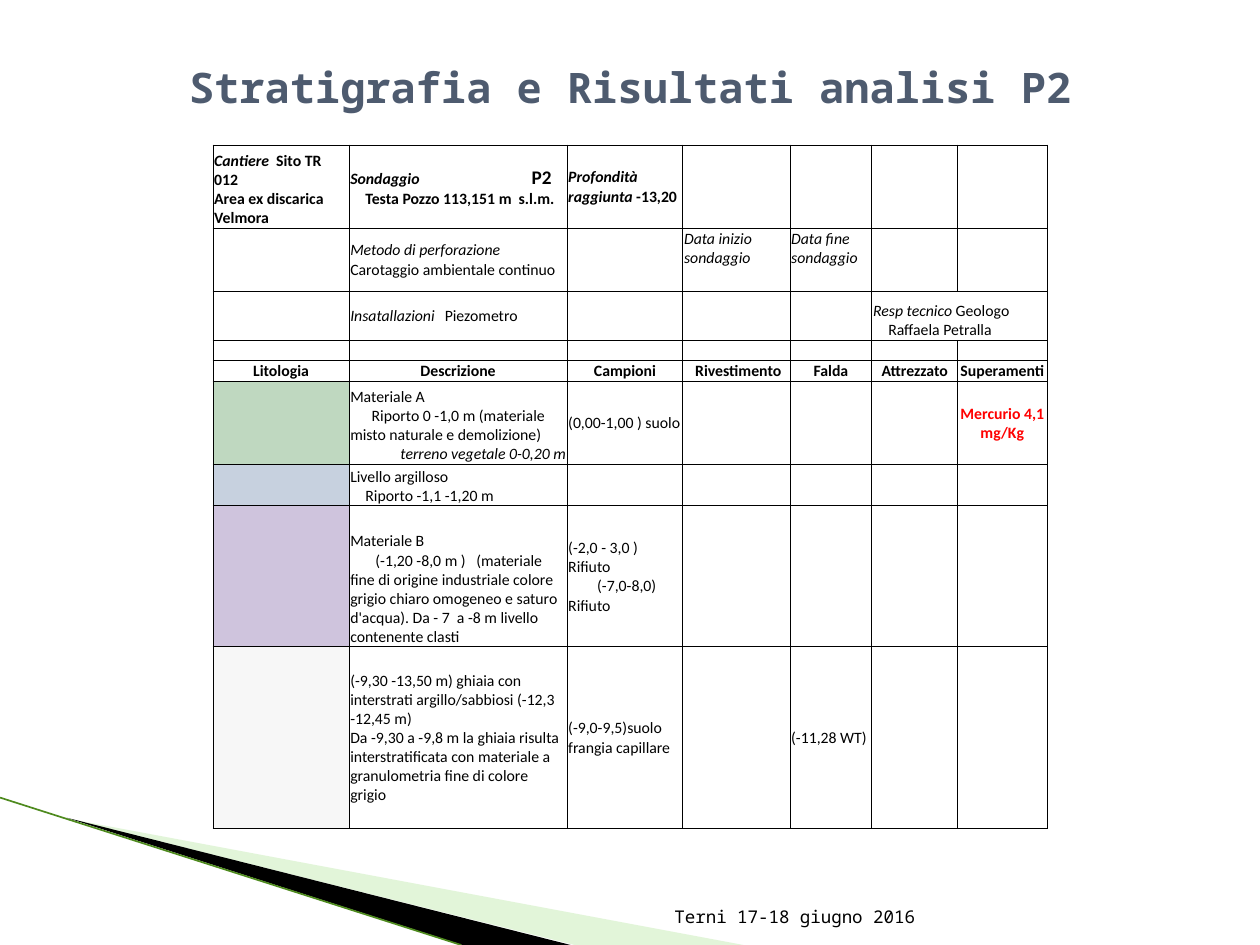
from dataclasses import dataclass
from typing import Optional

from lxml import etree
from pptx import Presentation
from pptx.dml.color import RGBColor
from pptx.enum import shapes, text
from pptx.oxml.ns import qn
from pptx.util import Inches, Pt


@dataclass(frozen=True)
class Theme:
    ink: str = "000000"
    title: str = "4E5B6F"
    alert: str = "FF0000"
    pale_green: str = "B8E7A1"
    edge_green: str = "4E8A1E"
    mono: str = "Noto Sans Mono"
    sans: str = "Calibri"
    title_size: float = 24
    footer_size: float = 10
    cell_size: float = 9
    well_size: float = 11
    border: float = 0.5


@dataclass(frozen=True)
class Run:
    text: str
    bold: bool = False
    italic: bool = False
    size: float = Theme.cell_size
    color: str = Theme.ink
    font: str = Theme.sans


@dataclass(frozen=True)
class Para:
    runs: tuple[Run, ...]
    align: text.PP_ALIGN = text.PP_ALIGN.LEFT
    indent: float = 0
    tab: Optional[float] = None


@dataclass(frozen=True)
class Cell:
    row: int
    col: int
    paras: tuple[Para, ...]
    anchor: text.MSO_ANCHOR = text.MSO_ANCHOR.MIDDLE
    columns: int = 1


THEME = Theme()
CENTER, RIGHT = text.PP_ALIGN.CENTER, text.PP_ALIGN.RIGHT
TOP, BOTTOM = text.MSO_ANCHOR.TOP, text.MSO_ANCHOR.BOTTOM
COLUMNS = (1.08, 1.73, 0.92, 0.85, 0.65, 0.68, 0.71)
ROWS = (0.66, 0.5, 0.39, 0.16, 0.16, 0.66, 0.33, 1.12, 1.44)
LITHOLOGY = {5: "BFD8C0", 6: "C7D1DF", 7: "CFC4DD", 8: "F7F7F7"}
HEADERS = ("Litologia", "Descrizione", "Campioni", " Rivestimento",
           "Falda", "Attrezzato", "Superamenti")


def plain(words: str, indent: float = 0, tab: Optional[float] = None) -> Para:
    return Para((Run(words),), indent=indent, tab=tab)


def italic(words: str) -> Para:
    return Para((Run(words, italic=True),))


def bold(words: str, color: str = THEME.ink) -> Para:
    return Para((Run(words, bold=True, color=color),), CENTER)


CELLS = [
    Cell(0, 0, (Para((Run("Cantiere ", True, True), Run(" Sito TR 012", True))),
                Para((Run("Area ex discarica Velmora", True),))), BOTTOM),
    Cell(0, 1, (Para((Run("Sondaggio\t", True, True),
                      Run("P2", True, size=THEME.well_size)), tab=1.44),
                Para((Run("Testa Pozzo 113,151 m  s.l.m.", True),), indent=0.12))),
    Cell(0, 2, (Para((Run("Profondità raggiunta ", True, True),
                      Run("-13,20", True))),)),
    Cell(1, 1, (italic("Metodo di perforazione"),
                plain("Carotaggio ambientale continuo"))),
    Cell(1, 3, (italic("Data inizio sondaggio"),), TOP),
    Cell(1, 4, (italic("Data fine sondaggio"),), TOP),
    Cell(2, 1, (Para((Run("Insatallazioni", italic=True),
                      Run("\tPiezometro")), tab=0.75),)),
    Cell(2, 5, (Para((Run("Resp tecnico ", italic=True), Run("Geologo"))),
                plain("Raffaela Petralla", 0.12)), BOTTOM, 2),
    *(Cell(4, col, (bold(name),)) for col, name in enumerate(HEADERS)),
    Cell(5, 1, (plain("Materiale A"),
                plain("Riporto 0 -1,0 m (materiale misto naturale e demolizione)", 0.17),
                Para((Run("terreno vegetale 0-0,20 m", italic=True),), RIGHT)), BOTTOM),
    Cell(5, 2, (plain("(0,00-1,00 ) suolo"),)),
    Cell(5, 6, (bold("Mercurio 4,1 mg/Kg", THEME.alert),)),
    Cell(6, 1, (plain("Livello argilloso"), plain("Riporto -1,1 -1,20 m", 0.12)), BOTTOM),
    Cell(7, 1, (plain("Materiale B"),
                plain("(-1,20 -8,0 m )\t(materiale fine di origine industriale colore "
                      "grigio chiaro omogeneo e saturo d'acqua). Da - 7  a -8 m livello "
                      "contenente clasti", 0.2, 1.09)), BOTTOM),
    Cell(7, 2, (plain("(-2,0 - 3,0 )"), plain("Rifiuto"),
                plain("(-7,0-8,0)", 0.23), plain("Rifiuto"))),
    Cell(8, 1, (plain("(-9,30 -13,50 m) ghiaia con interstrati argillo/sabbiosi "
                      "(-12,3 -12,45 m)"),
                plain("Da -9,30 a -9,8 m la ghiaia risulta interstratificata con "
                      "materiale a granulometria fine di colore grigio"))),
    Cell(8, 2, (plain("(-9,0-9,5)suolo frangia capillare"),)),
    Cell(8, 4, (plain("(-11,28 WT)"),)),
]


def write(tf, paras: tuple[Para, ...]) -> None:
    for i, para in enumerate(paras):
        p = tf.paragraphs[0] if i == 0 else tf.add_paragraph()
        p.alignment = para.align
        pPr = p._p.get_or_add_pPr()
        if para.indent:
            pPr.set("marL", "0")
            pPr.set("indent", str(Inches(para.indent)))
        if para.tab:
            tabs = etree.SubElement(pPr, qn("a:tabLst"))
            etree.SubElement(tabs, qn("a:tab"), pos=str(Inches(para.tab)), algn="l")
        for run in para.runs:
            r = p.add_run()
            r.text = run.text
            r.font.name, r.font.size = run.font, Pt(run.size)
            r.font.bold, r.font.italic = run.bold, run.italic
            r.font.color.rgb = RGBColor.from_string(run.color)


def format_cell(cell, fill: Optional[str]) -> None:
    cell.margin_left = cell.margin_right = cell.margin_top = Inches(0.01)
    cell.margin_bottom = 0
    tcPr = cell._tc.get_or_add_tcPr()
    for side in ("lnL", "lnR", "lnT", "lnB"):
        ln = etree.SubElement(tcPr, qn(f"a:{side}"), w=str(Pt(THEME.border)))
        solid = etree.SubElement(ln, qn("a:solidFill"))
        etree.SubElement(solid, qn("a:srgbClr"), val=THEME.ink)
    if fill:
        cell.fill.solid()
        cell.fill.fore_color.rgb = RGBColor.from_string(fill)
    else:
        cell.fill.background()
    end = etree.SubElement(cell.text_frame.paragraphs[0]._p, qn("a:endParaRPr"))
    end.set("sz", str(int(THEME.cell_size * 100)))


def add_log_table(s) -> None:
    frame = s.shapes.add_table(len(ROWS), len(COLUMNS), Inches(1.69), Inches(1.15),
                               Inches(sum(COLUMNS)), Inches(sum(ROWS)))
    table = frame.table
    table.first_row = table.horz_banding = False
    for column, width in zip(table.columns, COLUMNS):
        column.width = Inches(width)
    for i, height in enumerate(ROWS):
        table.rows[i].height = Inches(height)
        for j in range(len(COLUMNS)):
            format_cell(table.cell(i, j), LITHOLOGY.get(i) if j == 0 else None)
    for item in CELLS:
        cell = table.cell(item.row, item.col)
        if item.columns > 1:
            cell.merge(table.cell(item.row, item.col + item.columns - 1))
        cell.vertical_anchor = item.anchor
        write(cell.text_frame, item.paras)


def add_wedge(s, points: list[tuple[float, float]], color: str, opacity: int = 100) -> None:
    builder = s.shapes.build_freeform(*(Inches(v) for v in points[0]), scale=1.0)
    builder.add_line_segments([(Inches(x), Inches(y)) for x, y in points[1:]])
    sp = builder.convert_to_shape()
    sp.shadow.inherit = False
    sp.fill.solid()
    sp.fill.fore_color.rgb = RGBColor.from_string(color)
    sp.line.fill.background()
    if opacity < 100:
        clr = sp._element.spPr.find(f"{qn('a:solidFill')}/{qn('a:srgbClr')}")
        etree.SubElement(clr, qn("a:alpha"), val=str(opacity * 1000))


def add_edge(s) -> None:
    edge = s.shapes.add_connector(shapes.MSO_CONNECTOR.STRAIGHT, 0, Inches(6.33),
                                  Inches(3.66), Inches(7.5))
    edge.line.color.rgb = RGBColor.from_string(THEME.edge_green)
    edge.line.width = Pt(0.95)
    etree.SubElement(edge._element.spPr, qn("a:effectLst"))


def main() -> None:
    prs = Presentation()
    prs.slide_width, prs.slide_height = Inches(10), Inches(7.5)
    s = prs.slides.add_slide(prs.slide_layouts[5])
    add_wedge(s, [(0.55, 6.5), (5.9, 7.5), (4.56, 7.5)], THEME.pale_green, 40)
    add_wedge(s, [(0.53, 6.49), (4.53, 7.5), (3.67, 7.5)], THEME.ink)
    add_edge(s)
    add_log_table(s)

    title = s.shapes.title
    title.left, title.top, title.width, title.height = map(Inches, (0.5, 0.3, 9, 0.77))
    title.text_frame.vertical_anchor = text.MSO_ANCHOR.MIDDLE
    write(title.text_frame, (Para((Run("Stratigrafia e Risultati analisi P2", True,
                                       size=THEME.title_size, color=THEME.title,
                                       font=THEME.mono),), CENTER),))

    footer = s.shapes.add_textbox(*map(Inches, (4.79, 7.01, 2.57, 0.4))).text_frame
    footer.word_wrap = True
    footer.vertical_anchor = BOTTOM
    write(footer, (Para((Run("Terni 17-18 giugno 2016", size=THEME.footer_size,
                             font=THEME.mono),), RIGHT),))
    prs.save("out.pptx")


if __name__ == "__main__":
    main()
